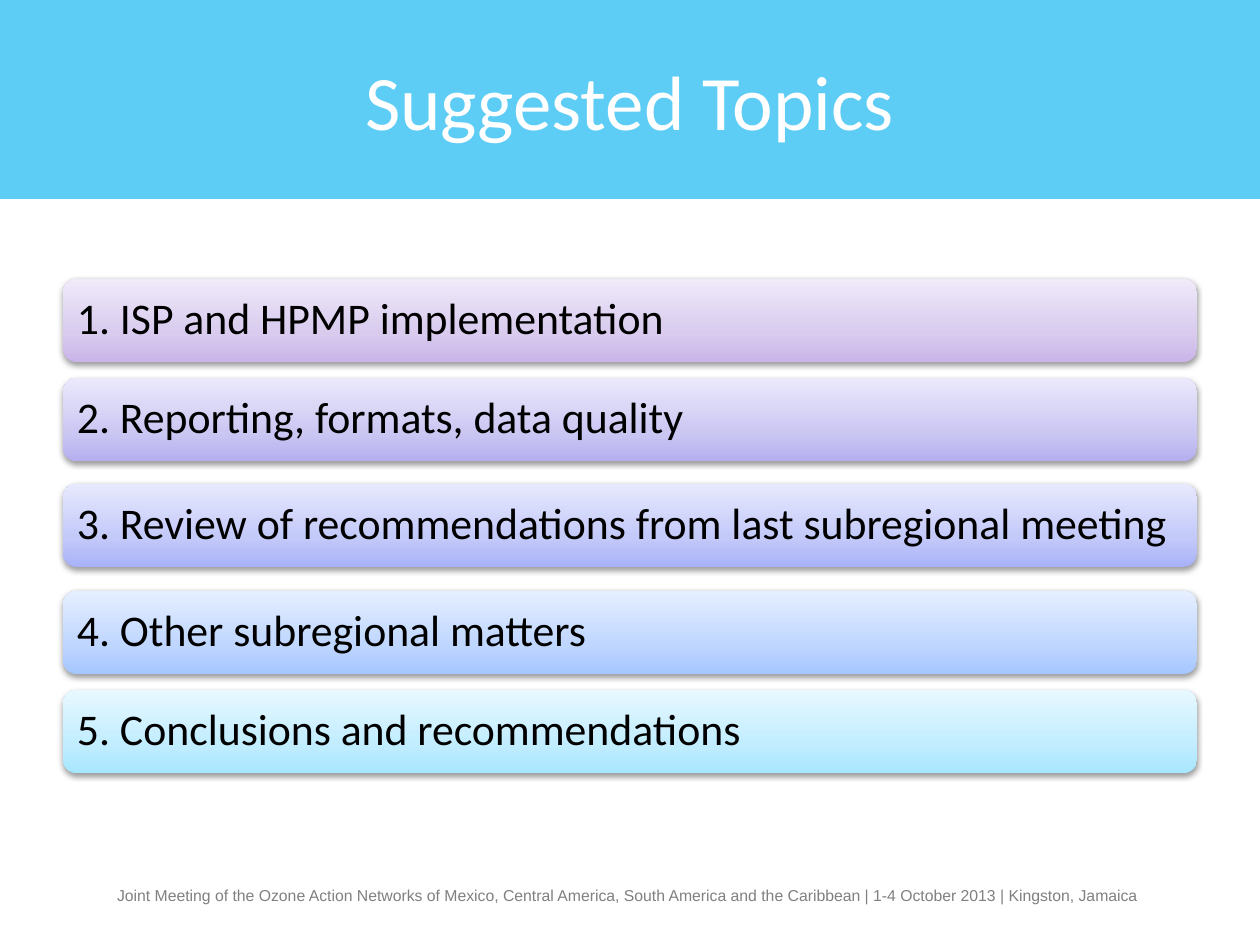
import copy
from dataclasses import dataclass

import pptx
import pptx.dml.color
import pptx.enum.shapes
import pptx.enum.text
import pptx.oxml
import pptx.oxml.ns
import pptx.util
from pptx.util import Cm, Pt

ALIGN = pptx.enum.text.PP_ALIGN
ANCHOR = pptx.enum.text.MSO_ANCHOR
SHAPE = pptx.enum.shapes.MSO_SHAPE
NAMESPACE = pptx.oxml.ns.nsdecls("a")

SHADOW_XML = (
    f'<a:outerShdw {NAMESPACE} blurRad="40000" dist="20000" dir="5400000" rotWithShape="0">'
    '<a:srgbClr val="000000"><a:alpha val="38000"/></a:srgbClr></a:outerShdw>'
)


@dataclass
class Topic:
    text: str
    top: float
    colours: tuple[str, str, str]


TOPICS = [
    Topic("1. ISP and HPMP implementation", 5.62, ("C9B5E8", "D8CBEE", "F0EAF9")),
    Topic("2. Reporting, formats, data quality", 7.62, ("B6AFF0", "CBC7F3", "EBE9FB")),
    Topic("3. Review of recommendations from last subregional meeting", 9.75,
          ("A9B2F8", "C3C9F9", "E7E9FE")),
    Topic("4. Other subregional matters", 11.91, ("A5C6FF", "BFD6FF", "E6EFFF")),
    Topic("5. Conclusions and recommendations", 13.91, ("A7E6FF", "C1EDFF", "E7F8FF")),
]
GRADIENT_POSITIONS = (0, 0.35, 1)


def colour(hex_value: str) -> pptx.dml.color.RGBColor:
    return pptx.dml.color.RGBColor.from_string(hex_value)


def write_text(shape, text: str, *, size: float, font: str = "Calibri",
               hex_colour: str = "000000", align=ALIGN.LEFT, anchor=ANCHOR.MIDDLE,
               margin_x: float = 0.25, margin_y: float = 0.13,
               line_spacing: float = 1.0) -> None:
    frame = shape.text_frame
    frame.word_wrap = True
    frame.vertical_anchor = anchor
    frame.margin_left = frame.margin_right = Cm(margin_x)
    frame.margin_top = frame.margin_bottom = Cm(margin_y)
    paragraph = frame.paragraphs[0]
    paragraph.alignment = align
    paragraph.line_spacing = line_spacing
    run = paragraph.add_run()
    run.text = text
    run.font.size = Pt(size)
    run.font.name = font
    run.font.color.rgb = colour(hex_colour)


def apply_gradient(shape, colours: tuple[str, str, str]) -> None:
    """Fill the shape from bottom to top with three colours."""
    fill = shape.fill
    fill.gradient()
    fill.gradient_angle = 90
    stop_list = shape.element.spPr.find(".//" + pptx.oxml.ns.qn("a:gsLst"))
    stop_list.append(copy.deepcopy(stop_list[-1]))
    for stop, position, hex_colour in zip(fill.gradient_stops, GRADIENT_POSITIONS, colours):
        stop.position = position
        stop.color.rgb = colour(hex_colour)


def add_header(slide) -> None:
    band = slide.shapes.add_shape(SHAPE.RECTANGLE, 0, 0, Cm(25.4), Cm(4.01))
    band.shadow.inherit = False
    band.line.fill.background()
    band.fill.solid()
    band.fill.fore_color.rgb = colour("00B0F0")
    band_colour = band.element.spPr.find(".//" + pptx.oxml.ns.qn("a:srgbClr"))
    band_colour.append(pptx.oxml.parse_xml(f'<a:alpha {NAMESPACE} val="63000"/>'))

    title = slide.shapes.add_textbox(Cm(1.27), Cm(0.43), Cm(22.86), Cm(3.18))
    write_text(title, "Suggested Topics", size=44, hex_colour="FFFFFF", align=ALIGN.CENTER)


def add_topic(slide, topic: Topic) -> None:
    bar = slide.shapes.add_shape(
        SHAPE.ROUNDED_RECTANGLE, Cm(1.27), Cm(topic.top), Cm(22.86), Cm(1.68))
    bar.line.fill.background()
    apply_gradient(bar, topic.colours)
    bar.shadow.inherit = False
    effects = bar.element.spPr.find(pptx.oxml.ns.qn("a:effectLst"))
    effects.append(pptx.oxml.parse_xml(SHADOW_XML))
    write_text(bar, topic.text, size=25, margin_x=0.2, line_spacing=0.9)


def add_footer(slide) -> None:
    footer = slide.shapes.add_textbox(Cm(2.11), Cm(17.73), Cm(21.41), Cm(0.64))
    write_text(
        footer,
        "Joint Meeting of the Ozone Action Networks of Mexico, Central America, "
        "South America and the Caribbean | 1-4 October 2013 | Kingston, Jamaica",
        size=9, font="Arial", hex_colour="808080", anchor=ANCHOR.TOP)


def main() -> None:
    presentation = pptx.Presentation()
    presentation.slide_width = Cm(25.4)
    presentation.slide_height = Cm(19.05)
    slide = presentation.slides.add_slide(presentation.slide_layouts[6])
    add_header(slide)
    for topic in TOPICS:
        add_topic(slide, topic)
    add_footer(slide)
    presentation.save("out.pptx")


if __name__ == "__main__":
    main()
